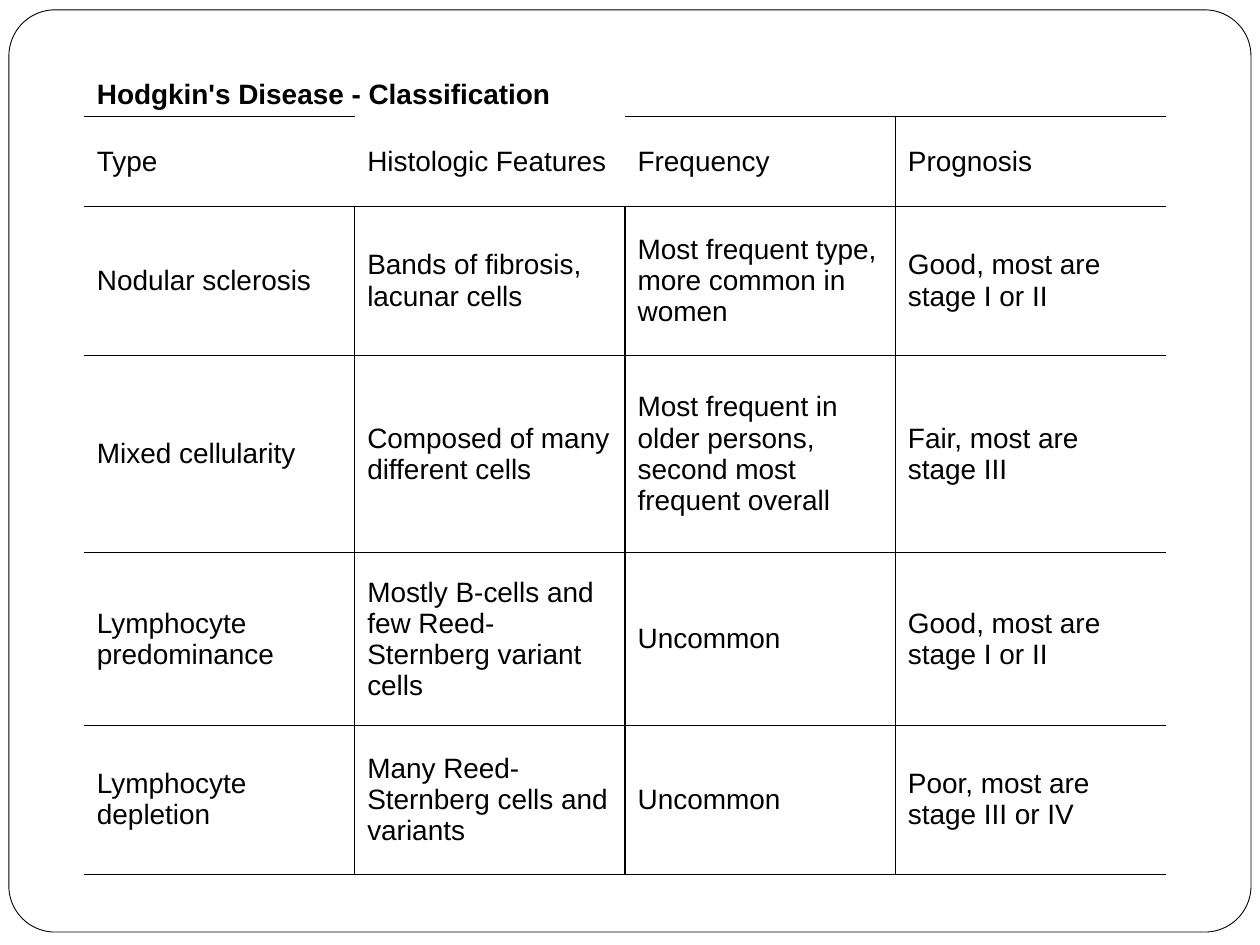
"""Build a slide with a table classifying Hodgkin's disease."""
from dataclasses import dataclass

from lxml import etree
from pptx import Presentation
from pptx import util as u
from pptx.dml.color import RGBColor
from pptx.enum import shapes, text
from pptx.oxml import ns

BLACK, WHITE = "000000", "FFFFFF"
COLUMN_WIDTH = 5.45
EDGE_TAGS = {"left": "a:lnL", "right": "a:lnR", "top": "a:lnT", "bottom": "a:lnB"}


@dataclass
class Row:
    height: float
    texts: tuple[str, ...]


TITLE = Row(0.88, ("Hodgkin's Disease - Classification",))
HEADER = Row(1.81, ("Type", "Histologic Features", "Frequency", "Prognosis"))
TYPES = [
    Row(3, ("Nodular sclerosis", "Bands of fibrosis, lacunar cells",
            "Most frequent type, more common in women", "Good, most are stage I or II")),
    Row(3.98, ("Mixed cellularity", "Composed of many different cells",
               "Most frequent in older persons, second most frequent overall",
               "Fair, most are stage III")),
    Row(3.48, ("Lymphocyte predominance",
               "Mostly B-cells and few Reed-Sternberg variant cells",
               "Uncommon", "Good, most are stage I or II")),
    Row(3, ("Lymphocyte depletion", "Many Reed-Sternberg cells and variants",
            "Uncommon", "Poor, most are stage III or IV")),
]
ROWS = [TITLE, HEADER, *TYPES]


def color(value: str) -> RGBColor:
    return RGBColor.from_string(value)


def write(cell, words: str, *, size: float = 16, bold: bool = False,
          font: str = "Arial", ink: str = BLACK) -> None:
    cell.vertical_anchor = text.MSO_ANCHOR.MIDDLE
    span = cell.text_frame.paragraphs[0].add_run()
    span.text = words
    span.font.name, span.font.size, span.font.bold = font, u.Pt(size), bold
    span.font.color.rgb = color(ink)


def visible_edges(row: int, column: int) -> set[str]:
    """Return the cell edges that carry a line."""
    if row == 0:
        return set() if column == 1 else {"bottom"}
    edges = {"top", "bottom"}
    if row == 1:
        edges |= {2: {"right"}, 3: {"left"}}.get(column, set())
        return edges - {"top"} if column == 1 else edges
    if column > 0:
        edges.add("left")
    if column < len(HEADER.texts) - 1:
        edges.add("right")
    return edges


def set_borders(cell, edges: set[str], *, width: float = 0.75, ink: str = BLACK) -> None:
    properties = cell._tc.get_or_add_tcPr()
    for position, (edge, tag) in enumerate(EDGE_TAGS.items()):
        line = etree.Element(ns.qn(tag), w=str(u.Pt(width)))
        if edge in edges:
            fill = etree.SubElement(line, ns.qn("a:solidFill"))
            etree.SubElement(fill, ns.qn("a:srgbClr"), val=ink)
        else:
            etree.SubElement(line, ns.qn("a:noFill"))
        properties.insert(position, line)


def add_frame(page) -> None:
    box = page.shapes.add_shape(shapes.MSO_SHAPE.ROUNDED_RECTANGLE,
                                u.Cm(0.18), u.Cm(0.2), u.Cm(25.04), u.Cm(18.59))
    box.adjustments[0] = 0.05
    box.shadow.inherit = False
    box.fill.solid()
    box.fill.fore_color.rgb = color(WHITE)
    box.line.color.rgb = color(BLACK)
    box.line.width = u.Pt(0.5)


def add_classification(page) -> None:
    count = len(HEADER.texts)
    table = page.shapes.add_table(
        len(ROWS), count, u.Cm(1.7), u.Cm(1.47), u.Cm(COLUMN_WIDTH * count),
        u.Cm(sum(row.height for row in ROWS))).table
    table.first_row = table.horz_banding = False
    for column in table.columns:
        column.width = u.Cm(COLUMN_WIDTH)
    table.cell(0, 0).merge(table.cell(0, count - 1))
    for r, row in enumerate(ROWS):
        table.rows[r].height = u.Cm(row.height)
        for c in range(count):
            cell = table.cell(r, c)
            cell.fill.background()
            set_borders(cell, visible_edges(r, c))
        for c, words in enumerate(row.texts):
            write(table.cell(r, c), words, bold=row is TITLE)


def main() -> None:
    deck = Presentation()
    deck.slide_width, deck.slide_height = u.Cm(25.4), u.Cm(19.05)
    page = deck.slides.add_slide(deck.slide_layouts[6])
    add_frame(page)
    add_classification(page)
    deck.save("out.pptx")


if __name__ == "__main__":
    main()
